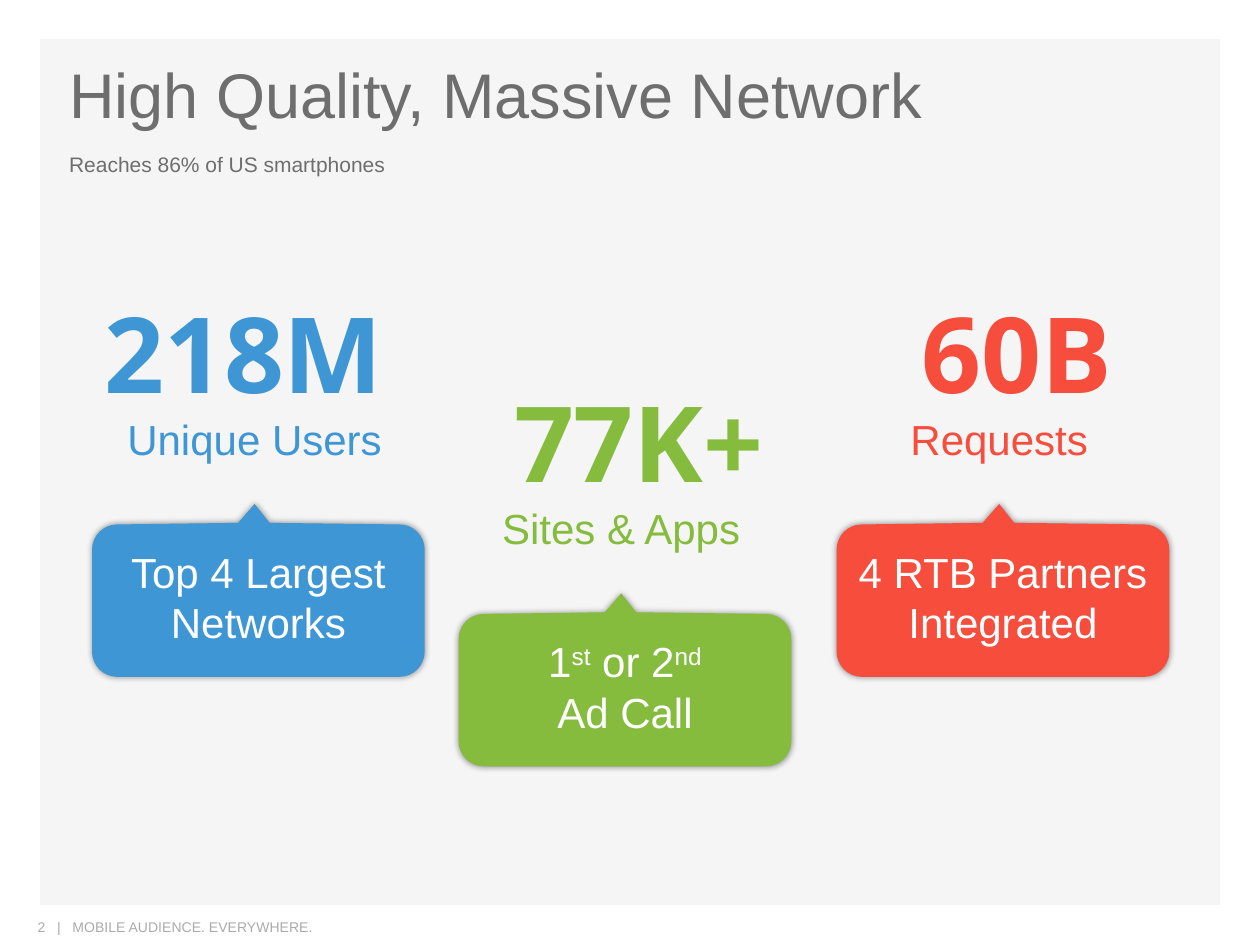
from dataclasses import dataclass

from lxml import etree
from pptx import Presentation
from pptx.dml.color import RGBColor
from pptx.enum.shapes import MSO_SHAPE
from pptx.enum.text import MSO_ANCHOR, MSO_AUTO_SIZE, PP_ALIGN
from pptx.oxml.ns import qn
from pptx.util import Pt

RECT = MSO_SHAPE.RECTANGLE
TOP, MIDDLE = MSO_ANCHOR.TOP, MSO_ANCHOR.MIDDLE
LEFT, CENTER = PP_ALIGN.LEFT, PP_ALIGN.CENTER
FIXED = MSO_AUTO_SIZE.NONE
GREY = "6E6E6E"
BEND = 0.55


@dataclass(frozen=True)
class Run:
    text: str
    sup: bool = False


@dataclass(frozen=True)
class Style:
    size: float
    color: str
    align: PP_ALIGN = LEFT
    font: str = "Arial"
    bold: bool = False


@dataclass(frozen=True)
class Stat:
    left: float
    top: float
    color: str
    value: str
    label: str
    lines: tuple[tuple[Run, ...], ...]
    align: PP_ALIGN = CENTER
    high: float = 79.9


STATS = (
    Stat(52.6, 161.3, "3E96D5", "218M", "Unique Users",
         ((Run("Top 4 Largest Networks"),),), LEFT),
    Stat(262.1, 212.4, "85BC3E", "77K+", "Sites & Apps",
         ((Run("1"), Run("st", True), Run(" or 2"), Run("nd", True)),
          (Run("Ad Call"),))),
    Stat(478.1, 161.3, "F64D3D", "60B", "Requests",
         ((Run("4 RTB Partners Integrated"),),), high=90),
)


def rgb(code: str) -> RGBColor:
    return RGBColor.from_string(code)


def write(shape, lines, style: Style, head: float = 3.6, anchor=TOP) -> None:
    """Fill a shape with one paragraph, run by run."""
    frame = shape.text_frame
    frame.word_wrap = True
    frame.auto_size = FIXED
    frame.vertical_anchor = anchor
    frame.margin_left = frame.margin_right = Pt(7.2)
    frame.margin_top, frame.margin_bottom = Pt(head), Pt(3.6)
    para = frame.paragraphs[0]
    para.alignment = style.align
    for row, line in enumerate(lines):
        if row:
            para.add_line_break()
        for part in line:
            run = para.add_run()
            run.text = part.text
            font = run.font
            font.name, font.size = style.font, Pt(style.size)
            font.bold = style.bold
            font.color.rgb = rgb(style.color)
            if part.sup:
                run._r.get_or_add_rPr().set("baseline", "30000")


def label(shapes, box, text: str, style: Style) -> None:
    shape = shapes.add_textbox(*map(Pt, box))
    write(shape, ((Run(text),),), style)


def paint(shape, color: str) -> None:
    shape.fill.solid()
    shape.fill.fore_color.rgb = rgb(color)
    shape.line.fill.background()
    shape.shadow.inherit = False


def glow(shape) -> None:
    """Add a soft dark edge around a shape."""
    effects = shape._element.spPr.find(qn("a:effectLst"))
    shade = etree.SubElement(effects, qn("a:outerShdw"), blurRad=str(Pt(4)),
                             dist="0", dir="2700000", rotWithShape="0")
    tint = etree.SubElement(shade, qn("a:srgbClr"), val="000000")
    etree.SubElement(tint, qn("a:alpha"), val="43000")


def curve(line, start, end, peak) -> None:
    """Turn a straight segment into a curve that bends towards a peak."""
    bend = etree.Element(qn("a:cubicBezTo"))
    pulls = [tuple(a + BEND * (b - a) for a, b in zip(spot, peak))
             for spot in (start, end)]
    for x, y in (*pulls, end):
        etree.SubElement(bend, qn("a:pt"), x=str(Pt(x)), y=str(Pt(y)))
    line.getparent().replace(line, bend)


def bubble(shapes, left: float, top: float):
    """Rounded box with a small peak on its upper edge."""
    wide, high, edge, rad = 190.1, 98.8, 11.7, 14.4
    # Each step: end point, and the corner it rounds if any
    steps = (
        ((0, edge + rad), None),
        ((rad, edge), (0, edge)),
        ((83.5, 10.8), None), ((92.9, 0), None), ((101.5, 10.8), None),
        ((wide - rad, edge), None),
        ((wide, edge + rad), (wide, edge)),
        ((wide, high - rad), None),
        ((wide - rad, high), (wide, high)),
        ((rad, high), None),
        ((0, high - rad), (0, high)),
    )
    spots = [(Pt(left + x), Pt(top + y)) for (x, y), _ in steps]
    form = shapes.build_freeform(*spots[0])
    form.add_line_segments(spots[1:], close=True)
    shape = form.convert_to_shape()
    lines = list(shape._element.iter(qn("a:lnTo")))
    for line, (start, _), (end, peak) in zip(lines, steps, steps[1:]):
        if peak:
            curve(line, start, end, peak)
    return shape


def draw(slide, stat: Stat) -> None:
    shapes = slide.shapes.add_group_shape().shapes
    left, top = stat.left, stat.top
    label(shapes, (left - 16.6, top + 71.3, 218.9, 41), stat.label,
          Style(24, stat.color, CENTER))
    label(shapes, (left, top, 205.9, stat.high), stat.value,
          Style(60, stat.color, stat.align, "Open Sans", True))
    card = bubble(shapes, left, top + 126.7)
    paint(card, stat.color)
    glow(card)
    write(card, stat.lines, Style(24, "FFFFFF", CENTER), 10.8, MIDDLE)


def main() -> None:
    deck = Presentation()
    deck.slide_width, deck.slide_height = Pt(720), Pt(540)
    slide = deck.slides.add_slide(deck.slide_layouts[5])
    shapes = slide.shapes

    # Title
    title = shapes.title
    title.left, title.top = Pt(32.4), Pt(28.1)
    title.width, title.height = Pt(651.6), Pt(46.1)
    write(title, ((Run("High Quality, Massive Network"),),), Style(36, GREY))

    # Panel behind the title
    panel = shapes.add_shape(RECT, Pt(23), Pt(22.3), Pt(674.2), Pt(494.8))
    paint(panel, "F5F5F5")
    title._element.addprevious(panel._element)

    # Footer and subtitle
    label(shapes, (14.4, 521.3, 284.4, 27.4),
          "2   |   MOBILE AUDIENCE. EVERYWHERE.", Style(8, "AAAAAA"))
    label(shapes, (32.4, 82.8, 651.6, 54), "Reaches 86% of US smartphones",
          Style(12, GREY))

    # Figures with their callouts
    for stat in STATS:
        draw(slide, stat)

    deck.save("out.pptx")


if __name__ == "__main__":
    main()
